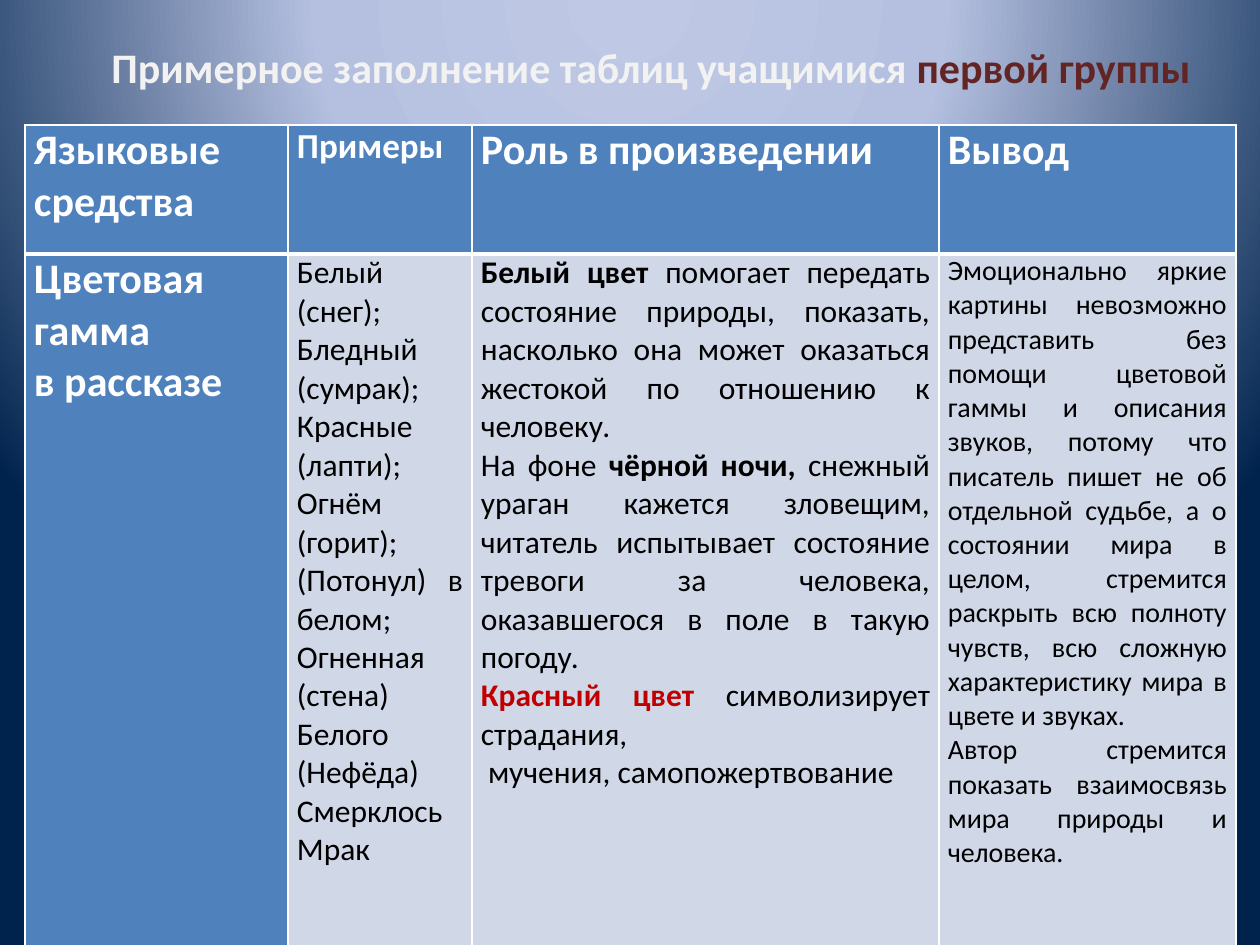
import dataclasses

import pptx
import pptx.dml.color
import pptx.enum.text
import pptx.oxml
import pptx.oxml.ns
import pptx.util

EMU_PER_PX = 914400 / 126


@dataclasses.dataclass(frozen=True)
class Theme:
    font: str = "Calibri"
    large: int = 24
    medium: int = 20
    body: int = 18
    small: int = 16
    title: str = "F2F2F2"
    group: str = "632523"
    white: str = "FFFFFF"
    black: str = "000000"
    red: str = "C00000"
    header_fill: str = "4F81BD"
    body_fill: str = "D0D8E8"
    backdrop: tuple = ((0, "BFC9E5"), (40, "B5C0E0"), (100, "00234D"))
    thin: int = 1
    thick: int = 3


THEME = Theme()
ALIGN = pptx.enum.text.PP_ALIGN

COLUMN_WIDTHS = (263, 184, 467, 297)
ROW_HEIGHTS = (129, 718)

# A cell is (type size, paragraphs); a paragraph is a list of (text, bold, colour).


def heading(size, *lines):
    return size, [[(line, True, THEME.white)] for line in lines]


def plain(text):
    return text, False, THEME.black


def strong(text, color=THEME.black):
    return text, True, color


HEADER = (
    heading(THEME.large, "Языковые средства"),
    heading(THEME.medium, "Примеры"),
    heading(THEME.large, "Роль в произведении"),
    heading(THEME.large, "Вывод"),
)
EXAMPLES = (
    "Белый (снег);", "Бледный (сумрак);", "Красные (лапти);",
    "Огнём (горит);", "(Потонул) в белом;", "Огненная (стена)",
    "Белого (Нефёда)", "Смерклось", "Мрак",
)
ROLE = [
    [strong("Белый цвет "),
     plain("помогает передать состояние природы, показать, насколько она "
           "может оказаться жестокой по отношению к человеку.")],
    [plain("На фоне "), strong("чёрной ночи, "),
     plain("снежный ураган кажется зловещим, читатель испытывает состояние "
           "тревоги за человека, оказавшегося в поле в такую погоду.")],
    [strong("Красный цвет ", THEME.red), plain("символизирует страдания,")],
    [plain(" мучения, самопожертвование")],
]
CONCLUSION = [
    [plain("Эмоционально яркие картины невозможно представить без помощи "
           "цветовой гаммы и описания звуков, потому что писатель пишет не об "
           "отдельной судьбе, а о состоянии мира в целом, стремится раскрыть "
           "всю полноту чувств, всю сложную характеристику мира в цвете и "
           "звуках.")],
    [plain("Автор стремится показать взаимосвязь мира природы и человека.")],
]
COLOURS_ROW = (
    heading(THEME.large, "Цветовая гамма", "в рассказе"),
    (THEME.body, [[plain(line)] for line in EXAMPLES]),
    (THEME.body, ROLE),
    (THEME.small, CONCLUSION),
)


def px(length):
    return pptx.util.Emu(round(length * EMU_PER_PX))


def rgb(color):
    return pptx.dml.color.RGBColor.from_string(color)


def write(frame, paragraphs, size, align):
    for index, spans in enumerate(paragraphs):
        para = frame.add_paragraph() if index else frame.paragraphs[0]
        para.alignment = align
        for text, bold, color in spans:
            span = para.add_run()
            span.text = text
            span.font.name = THEME.font
            span.font.size = pptx.util.Pt(size)
            span.font.bold = bold
            span.font.color.rgb = rgb(color)


def paint_background(page):
    """Fill the page with a circular gradient centred above the title."""
    page.background.fill.gradient()
    old = page.element.find(".//" + pptx.oxml.ns.qn("a:gradFill"))
    stops = "".join(
        f'<a:gs pos="{place * 1000}"><a:srgbClr val="{color}"/></a:gs>'
        for place, color in THEME.backdrop)
    new = pptx.oxml.parse_xml(
        f'<a:gradFill {pptx.oxml.ns.nsdecls("a")} rotWithShape="1">'
        f'<a:gsLst>{stops}</a:gsLst><a:path path="circle">'
        '<a:fillToRect l="50000" t="-80000" r="50000" b="180000"/>'
        '</a:path></a:gradFill>')
    old.getparent().replace(old, new)


def add_title(page, left, top, width, height):
    box = page.shapes.add_textbox(px(left), px(top), px(width), px(height))
    frame = box.text_frame
    frame.word_wrap = True
    frame.vertical_anchor = pptx.enum.text.MSO_ANCHOR.MIDDLE
    frame.margin_bottom = px(63)
    spans = [strong("Примерное заполнение таблиц учащимися ", THEME.title),
             strong("первой группы", THEME.group)]
    write(frame, [spans], THEME.large, ALIGN.CENTER)


def set_borders(cell, top, bottom):
    widths = {"lnL": THEME.thin, "lnR": THEME.thin, "lnT": top, "lnB": bottom}
    properties = cell._tc.get_or_add_tcPr()
    for index, (side, width) in enumerate(widths.items()):
        properties.insert(index, pptx.oxml.parse_xml(
            f'<a:{side} {pptx.oxml.ns.nsdecls("a")} w="{pptx.util.Pt(width)}">'
            f'<a:solidFill><a:srgbClr val="{THEME.white}"/></a:solidFill>'
            f'</a:{side}>'))


def fill_cell(cell, content, fill, top, bottom):
    size, paragraphs = content
    cell.margin_left = cell.margin_right = px(9)
    cell.margin_top = cell.margin_bottom = 0
    cell.fill.solid()
    cell.fill.fore_color.rgb = rgb(fill)
    set_borders(cell, top, bottom)
    write(cell.text_frame, paragraphs, size, ALIGN.JUSTIFY)


def add_language_table(page, left, top):
    rows = (HEADER, COLOURS_ROW)
    table = page.shapes.add_table(
        len(rows), len(COLUMN_WIDTHS), px(left), px(top),
        px(sum(COLUMN_WIDTHS)), px(sum(ROW_HEIGHTS))).table
    table.horz_banding = False
    for column, width in zip(table.columns, COLUMN_WIDTHS):
        column.width = px(width)
    for row, height in zip(table.rows, ROW_HEIGHTS):
        row.height = px(height)
    for r, contents in enumerate(rows):
        edges = (THEME.thick, THEME.thin) if r else (THEME.thin, THEME.thick)
        for c, content in enumerate(contents):
            fill = THEME.body_fill if r and c else THEME.header_fill
            fill_cell(table.cell(r, c), content, fill, *edges)


def main():
    deck = pptx.Presentation()
    deck.slide_width, deck.slide_height = px(1260), px(945)
    page = deck.slides.add_slide(deck.slide_layouts[6])
    paint_background(page)
    add_title(page, 84, 16, 1134, 158)
    add_language_table(page, 25, 125)
    deck.save("out.pptx")


if __name__ == "__main__":
    main()
